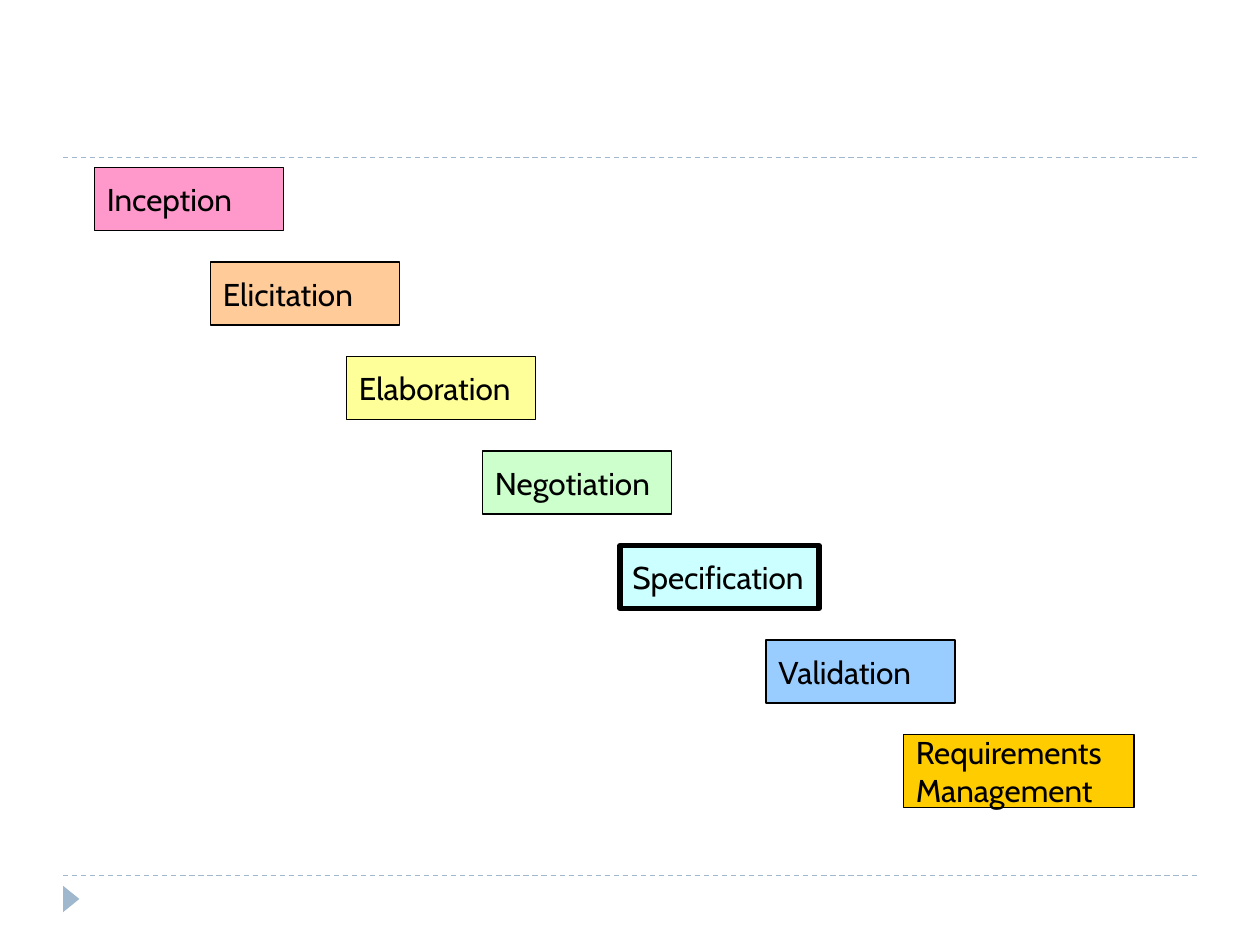
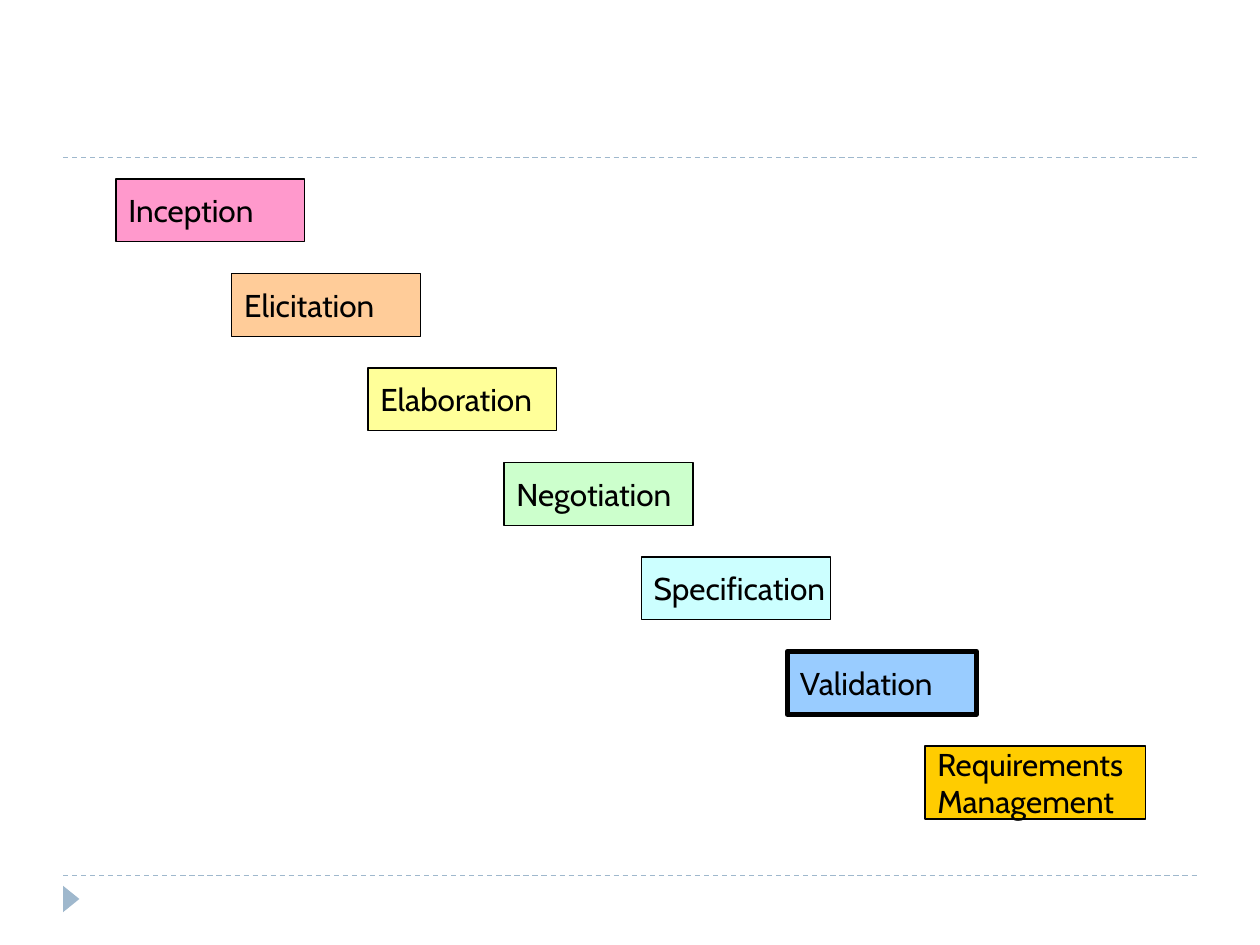
from dataclasses import dataclass

from lxml.etree import SubElement
from pptx import Presentation
from pptx.dml.color import RGBColor
from pptx.enum.dml import MSO_LINE
from pptx.enum.shapes import MSO_CONNECTOR, MSO_SHAPE
from pptx.enum.text import MSO_ANCHOR, PP_ALIGN
from pptx.oxml.ns import qn
from pptx.util import Inches, Pt


@dataclass(frozen=True)
class Theme:
    font: str = "Cabin"
    text_size: float = 18
    ink: str = "000000"
    accent: str = "9FB8CD"
    thin_line: float = 0.75
    highlight_line: float = 3


theme = Theme()

# Requirements tasks: label, fill, left offset from the first task
TASKS = [
    ("Inception", "FF99CC", 0),
    ("Elicitation", "FFCC99", 0.92),
    ("Elaboration", "FFFF99", 2),
    ("Negotiation", "CCFFCC", 3.08),
    ("Specification", "CCFFFF", 4.17),
    ("Validation", "99CCFF", 5.33),
    ("Requirements\nManagement", "FFCC00", 6.42),
]
TASK_WIDTH, TASK_HEIGHT = 1.5, 0.5
TALL_TASK_HEIGHT = 0.58
ROW_STEP = 0.75

# Each slide: left and top of the first task, highlighted task, special widths
SLIDES = [
    (0.75, 1.33, "Specification",
     {"Specification": 1.58, "Requirements\nManagement": 1.83}),
    (0.92, 1.42, "Validation", {"Requirements\nManagement": 1.75}),
]


def add_frame(slide):
    # Dashed rules above and below the content
    for y in (6.95, 1.25):
        rule = slide.shapes.add_connector(
            MSO_CONNECTOR.STRAIGHT, Inches(0.5), Inches(y), Inches(9.5), Inches(y))
        rule.line.color.rgb = RGBColor.from_string(theme.accent)
        rule.line.width = Pt(theme.thin_line)
        rule.line.dash_style = MSO_LINE.DASH
        SubElement(rule.element.spPr, qn("a:effectLst"))

    # Footer marker
    marker = slide.shapes.add_shape(
        MSO_SHAPE.ISOSCELES_TRIANGLE,
        Inches(0.46), Inches(7.07), Inches(0.21), Inches(0.13))
    marker.rotation = 90
    marker.shadow.inherit = False
    marker.fill.solid()
    marker.fill.fore_color.rgb = RGBColor.from_string(theme.accent)
    marker.line.fill.background()


def add_task(slide, label, fill, left, top, width, height, line_width):
    shape = slide.shapes.add_shape(
        MSO_SHAPE.RECTANGLE, Inches(left), Inches(top), Inches(width), Inches(height))
    shape.shadow.inherit = False
    shape.fill.solid()
    shape.fill.fore_color.rgb = RGBColor.from_string(fill)
    shape.line.color.rgb = RGBColor.from_string(theme.ink)
    shape.line.width = Pt(line_width)
    text_frame = shape.text_frame
    text_frame.text = label
    text_frame.word_wrap = False
    text_frame.vertical_anchor = MSO_ANCHOR.MIDDLE
    for paragraph in text_frame.paragraphs:
        paragraph.alignment = PP_ALIGN.LEFT
        for run in paragraph.runs:
            run.font.name = theme.font
            run.font.size = Pt(theme.text_size)
            run.font.color.rgb = RGBColor.from_string(theme.ink)


presentation = Presentation()
presentation.slide_width = Inches(10)
presentation.slide_height = Inches(7.5)
blank_layout = presentation.slide_layouts[6]

# One staircase of tasks per slide, with the current task outlined heavily
for first_left, first_top, current_task, special_widths in SLIDES:
    slide = presentation.slides.add_slide(blank_layout)
    add_frame(slide)
    for row, (label, fill, offset) in enumerate(TASKS):
        add_task(
            slide, label, fill,
            left=first_left + offset,
            top=first_top + row * ROW_STEP,
            width=special_widths.get(label, TASK_WIDTH),
            height=TALL_TASK_HEIGHT if "\n" in label else TASK_HEIGHT,
            line_width=theme.highlight_line if label == current_task else theme.thin_line)

presentation.save("out.pptx")
